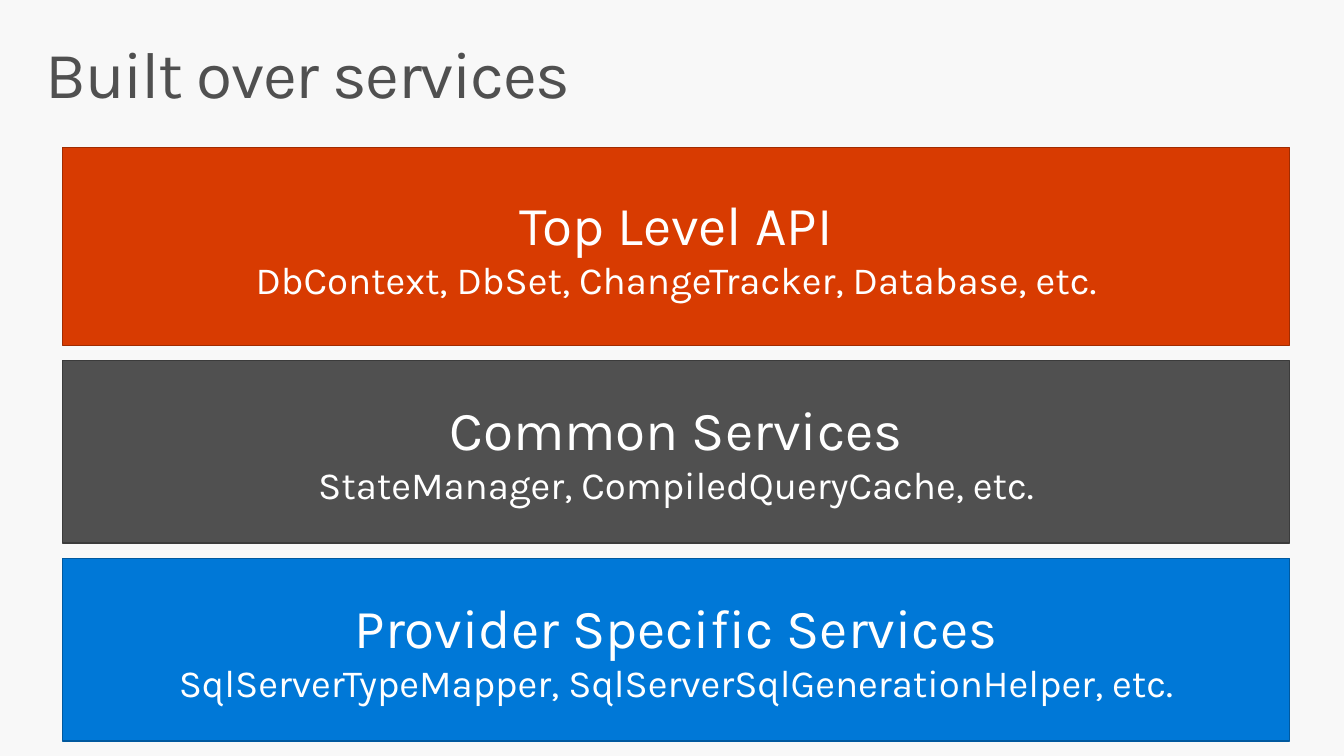
from pptx import Presentation
from pptx.dml.color import RGBColor
from pptx.enum.shapes import MSO_SHAPE
from pptx.enum.text import MSO_ANCHOR, MSO_AUTO_SIZE, PP_ALIGN
from pptx.util import Pt

RECTANGLE = MSO_SHAPE.RECTANGLE
TOP, MIDDLE = MSO_ANCHOR.TOP, MSO_ANCHOR.MIDDLE
LEFT, CENTER = PP_ALIGN.LEFT, PP_ALIGN.CENTER
NO_AUTOFIT = MSO_AUTO_SIZE.NONE
TITLE_ONLY = 5

COLORS = {
    "background": "F8F8F8",
    "text": "505050",
    "white": "FFFFFF",
    "orange": "D83B01",
    "orange line": "A02C01",
    "gray": "505050",
    "gray line": "3B3B3B",
    "blue": "0078D7",
    "blue line": "00599F",
}

# Layers from top to bottom: heading, examples, color, height
LAYERS = [
    ("Top Level API", "DbContext, DbSet, ChangeTracker, Database, etc.", "orange", 144),
    ("Common Services", "StateManager, CompiledQueryCache, etc.", "gray", 133.2),
    ("Provider Specific Services",
     "SqlServerTypeMapper, SqlServerSqlGenerationHelper, etc.", "blue", 133.2),
]
LAYER_LEFT, LAYER_TOP, LAYER_WIDTH, LAYER_GAP = 45.36, 107.5, 894.24, 11


def rgb(name):
    return RGBColor.from_string(COLORS[name])


class SlideBuilder:
    font_name = "Karla"

    def __init__(self, slide):
        self.slide = slide
        fill = slide.background.fill
        fill.solid()
        fill.fore_color.rgb = rgb("background")

    def set_frame(self, frame, anchor, horizontal_inset, vertical_inset):
        frame.word_wrap = True
        frame.auto_size = NO_AUTOFIT
        frame.vertical_anchor = anchor
        frame.margin_left = frame.margin_right = Pt(horizontal_inset)
        frame.margin_top = frame.margin_bottom = Pt(vertical_inset)

    def add_run(self, paragraph, text, size, color):
        run = paragraph.add_run()
        run.text = text
        run.font.name = self.font_name
        run.font.size = Pt(size)
        run.font.color.rgb = rgb(color)
        return run

    def title(self, text):
        shape = self.slide.shapes.title
        shape.left, shape.top = Pt(21.6), Pt(23)
        shape.width, shape.height = Pt(936), Pt(72)
        self.set_frame(shape.text_frame, TOP, 11.5, 7.2)
        paragraph = shape.text_frame.paragraphs[0]
        paragraph.alignment = LEFT
        paragraph.line_spacing = 0.9
        run = self.add_run(paragraph, text, 48, "text")
        # Tighten the letters by one point
        run.font._element.set("spc", "-100")

    def layer(self, heading, examples, color, top, height):
        shape = self.slide.shapes.add_shape(
            RECTANGLE, Pt(LAYER_LEFT), Pt(top), Pt(LAYER_WIDTH), Pt(height))
        shape.shadow.inherit = False
        shape.fill.solid()
        shape.fill.fore_color.rgb = rgb(color)
        shape.line.color.rgb = rgb(color + " line")
        shape.line.width = Pt(0.85)
        self.set_frame(shape.text_frame, MIDDLE, 0, 3.6)
        paragraph = shape.text_frame.paragraphs[0]
        paragraph.alignment = CENTER
        self.add_run(paragraph, heading, 40, "white")
        paragraph.add_line_break()
        self.add_run(paragraph, examples, 28, "white")


def main():
    presentation = Presentation()
    presentation.slide_width, presentation.slide_height = Pt(979.2), Pt(550.8)
    layout = presentation.slide_layouts[TITLE_ONLY]
    builder = SlideBuilder(presentation.slides.add_slide(layout))

    # Title
    builder.title("Built over services")

    # Stacked layers
    top = LAYER_TOP
    for heading, examples, color, height in LAYERS:
        builder.layer(heading, examples, color, top, height)
        top += height + LAYER_GAP

    presentation.save("out.pptx")


if __name__ == "__main__":
    main()
